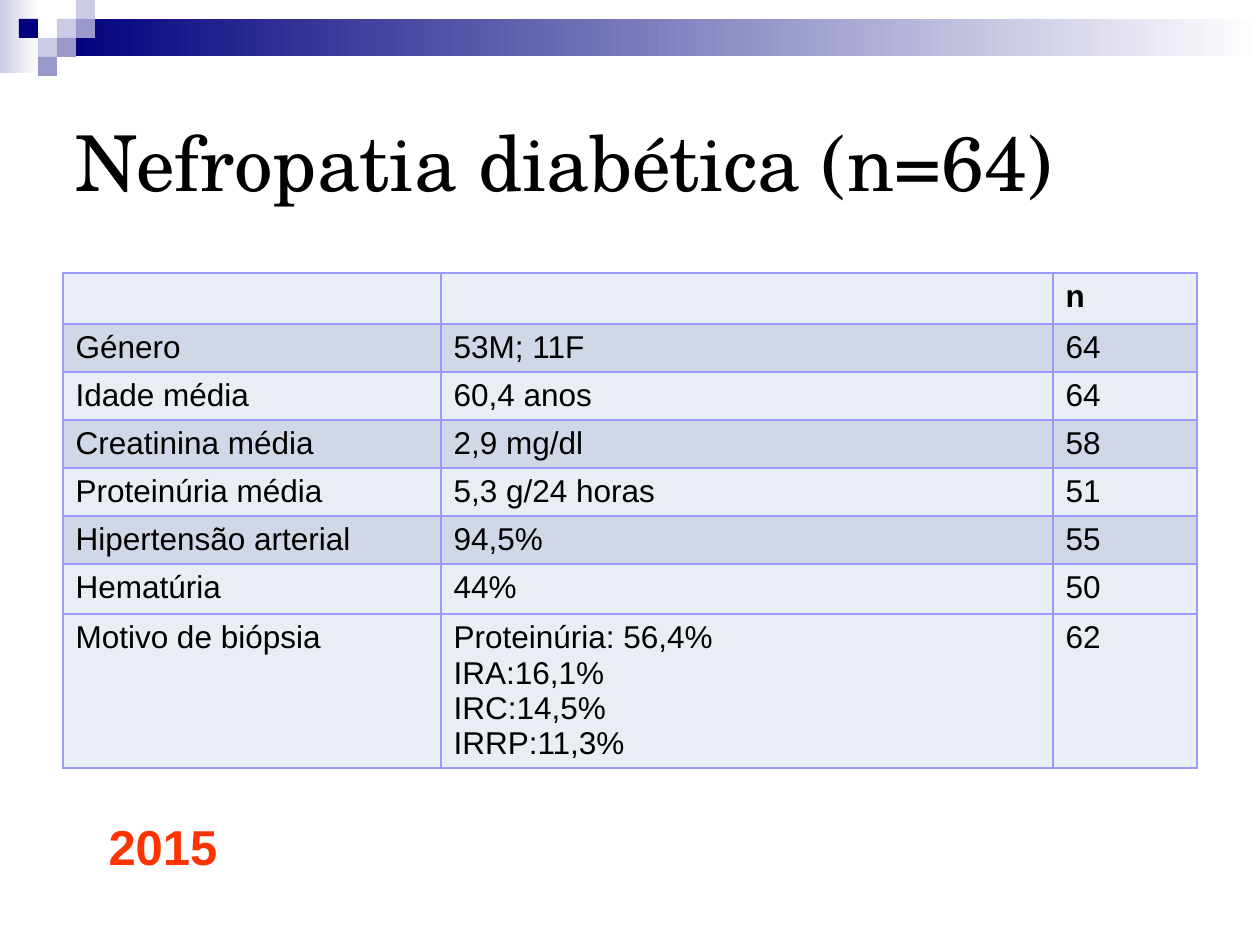
"""Builds the diabetic nephropathy summary slide."""
from dataclasses import dataclass

from lxml.etree import SubElement
from pptx import Presentation
from pptx.dml.color import RGBColor
from pptx.enum.shapes import MSO_SHAPE
from pptx.enum.text import MSO_ANCHOR, PP_ALIGN
from pptx.oxml.ns import qn
from pptx.util import Pt

TITLE = "Nefropatia diabética (n=64)"
YEAR = "2015"
ROWS = [
    ("", "", "n"),
    ("Género", "53M; 11F", "64"),
    ("Idade média", "60,4 anos", "64"),
    ("Creatinina média", "2,9 mg/dl", "58"),
    ("Proteinúria média", "5,3 g/24 horas", "51"),
    ("Hipertensão arterial", "94,5%", "55"),
    ("Hematúria", "44%", "50"),
    ("Motivo de biópsia", "Proteinúria: 56,4%\nIRA:16,1%\nIRC:14,5%\nIRRP:11,3%", "62"),
]
COLUMN_WIDTHS = [378, 612, 144]
ROW_HEIGHTS = [48] * 6 + [50, 154]


@dataclass(frozen=True)
class Theme:
    title_font: str = "TeX Gyre Schola"
    body_font: str = "Arial"
    title_size: int = 44
    body_size: int = 18
    year_size: int = 28
    text: str = "000000"
    accent: str = "FF3300"
    navy: str = "00007D"
    lilac: str = "9999CC"
    pale: str = "CCCCE6"
    white: str = "FFFFFF"
    border: str = "9999FF"
    bands: tuple = ("E9EDF4", "D0D8E8")


THEME = Theme()
SQUARE = 19
SQUARES = [
    (3, 1, THEME.pale), (4, 0, THEME.pale), (4, 1, THEME.lilac), (2, 2, THEME.pale),
    (1, 1, THEME.navy), (3, 2, THEME.lilac), (2, 3, THEME.lilac),
]
GRADIENTS = [((0, 0, 39, 73), THEME.pale), ((57, 19, 1203, 37), THEME.navy)]


def px(length):
    return round(length * 914400 / 126)


def place(shape, *bounds):
    shape.left, shape.top, shape.width, shape.height = map(px, bounds)


def style(frame, font, size, color, bold=False):
    for para in frame.paragraphs:
        for span in para.runs:
            span.font.name = font
            span.font.size = Pt(size)
            span.font.bold = bold
            span.font.color.rgb = RGBColor.from_string(color)


def add_block(slide, bounds, color, fade=False):
    block = slide.shapes.add_shape(MSO_SHAPE.RECTANGLE, *map(px, bounds))
    block.shadow.inherit = False
    block.line.fill.background()
    if fade:
        block.fill.gradient()
        block.fill.gradient_angle = 0
        for stop, tint in zip(block.fill.gradient_stops, (color, THEME.white)):
            stop.color.rgb = RGBColor.from_string(tint)
    else:
        block.fill.solid()
        block.fill.fore_color.rgb = RGBColor.from_string(color)


def add_borders(cell):
    properties = cell._tc.get_or_add_tcPr()
    for index, side in enumerate(("a:lnL", "a:lnR", "a:lnT", "a:lnB")):
        line = properties.makeelement(qn(side), {"w": str(Pt(1))})
        properties.insert(index, line)
        fill = SubElement(line, qn("a:solidFill"))
        SubElement(fill, qn("a:srgbClr"), val=THEME.border)


def add_decoration(slide):
    for bounds, color in GRADIENTS:
        add_block(slide, bounds, color, fade=True)
    for column, row, color in SQUARES:
        add_block(slide, (column * SQUARE, row * SQUARE, SQUARE, SQUARE), color)


def add_title(slide):
    title = slide.shapes.title
    place(title, 63, 66, 1134, 189)
    title.text_frame.text = TITLE
    title.text_frame.vertical_anchor = MSO_ANCHOR.MIDDLE
    title.text_frame.paragraphs[0].alignment = PP_ALIGN.LEFT
    style(title.text_frame, THEME.title_font, THEME.title_size, THEME.text)


def add_data_table(slide):
    bounds = (63, 273, sum(COLUMN_WIDTHS), sum(ROW_HEIGHTS))
    frame = slide.shapes.add_table(len(ROWS), len(COLUMN_WIDTHS), *map(px, bounds))
    table = frame.table
    table.first_row = table.horz_banding = False
    for column, width in zip(table.columns, COLUMN_WIDTHS):
        column.width = px(width)
    for index, (row, height, values) in enumerate(zip(table.rows, ROW_HEIGHTS, ROWS)):
        row.height = px(height)
        band = THEME.bands[index % 2 if index < len(ROWS) - 1 else 0]
        for cell, value in zip(row.cells, values):
            cell.text_frame.text = value
            cell.fill.solid()
            cell.fill.fore_color.rgb = RGBColor.from_string(band)
            add_borders(cell)
            style(cell.text_frame, THEME.body_font, THEME.body_size, THEME.text, index == 0)


def add_year(slide):
    box = slide.shapes.add_textbox(*map(px, (44, 810, 238, 72)))
    box.text_frame.word_wrap = True
    box.text_frame.text = YEAR
    box.text_frame.paragraphs[0].alignment = PP_ALIGN.CENTER
    style(box.text_frame, THEME.body_font, THEME.year_size, THEME.accent, bold=True)


def main():
    deck = Presentation()
    deck.slide_width, deck.slide_height = px(1260), px(945)
    slide = deck.slides.add_slide(deck.slide_layouts[5])
    add_decoration(slide)
    add_title(slide)
    add_data_table(slide)
    add_year(slide)
    deck.save("out.pptx")


if __name__ == "__main__":
    main()
